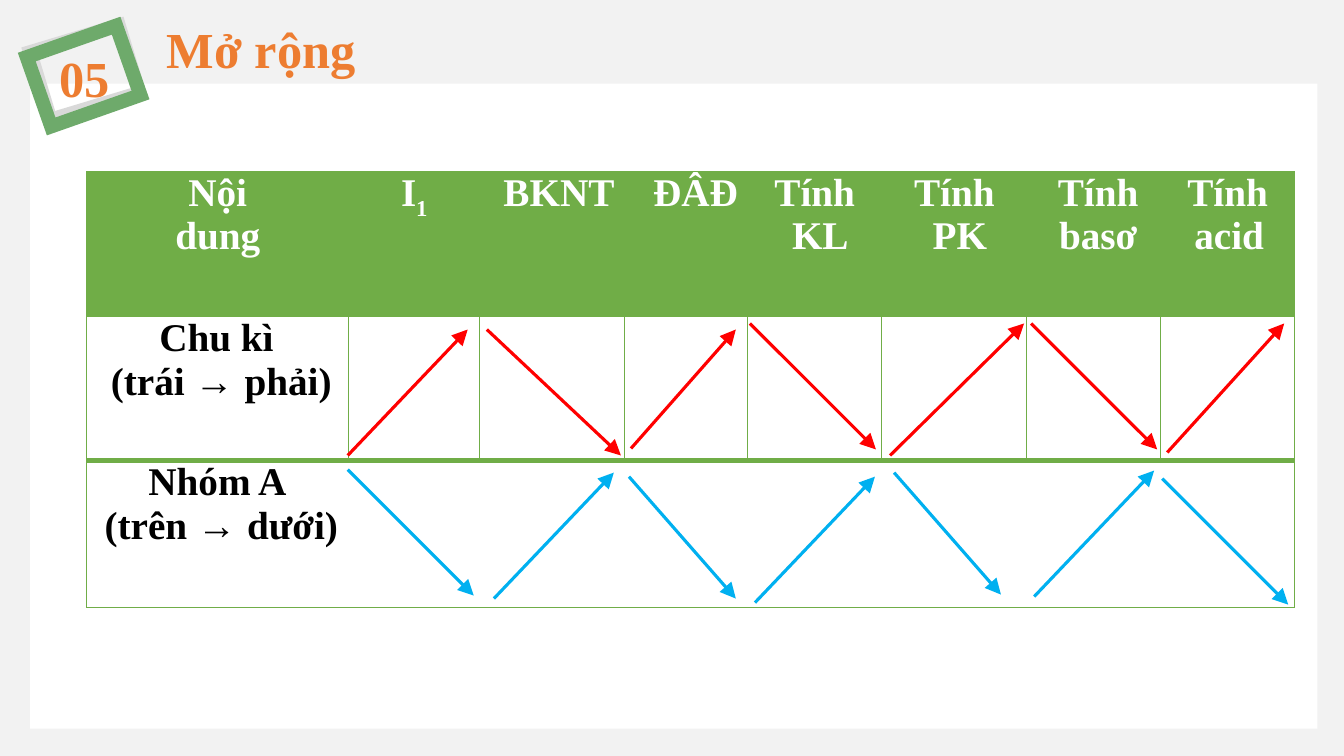
import pptx
import pptx.dml.color
import pptx.enum.shapes
import pptx.enum.text
import pptx.oxml
import pptx.oxml.ns
import pptx.util

# The slide is a grid of 40 columns by 22.5 rows of square units
UNIT = pptx.util.Inches(13.33) / 40
SERIF = "Times New Roman"
GREEN, ORANGE, RED, BLUE = "70AD47", "ED7D31", "FF0000", "00B0F0"
CENTER = pptx.enum.text.PP_ALIGN.CENTER
RIGHT = pptx.enum.text.PP_ALIGN.RIGHT

COLUMNS = [7.8, 3.9, 4.29, 3.66, 3.99, 4.32, 3.99, 3.99]
ROWS = [4.32, 4.29, 4.38]

# Heading pieces, then left margin, right margin and first-line indent
HEADINGS = [
    (["Nội dung"], 1.8, 1.8, 0),
    (["I", "1"], 0.87, 0.87, 0),
    (["BKNT"], 0.42, 0, 0),
    (["ĐÂĐ"], 0.6, 0, 0),
    (["Tính KL"], 0.93, 0.55, -0.33),
    (["Tính PK"], 0.93, 0.55, -0.33),
    (["Tính basơ"], 0.3, 0, 0),
    (["Tính acid"], 0.72, 0.6, -0.09),
]
ROW_LABELS = [
    [["Chu kì "], ["(trái ", "→ ", "phải)"]],
    [["Nhóm A "], ["(trên ", "→ ", "dưới)"]],
]

# Left, top, width and height of each trend arrow
PERIOD_ARROWS = [
    (10.35, 9.81, 3.57, 3.75), (14.49, 9.81, 3.99, 3.75),
    (18.78, 9.81, 3.12, 3.54), (22.32, 9.63, 3.75, 3.75),
    (26.49, 9.63, 3.99, 3.93), (30.69, 9.63, 3.75, 3.75),
    (34.74, 9.63, 3.48, 3.84),
]
GROUP_ARROWS = [
    (10.35, 13.98, 3.75, 3.75), (14.7, 14.07, 3.57, 3.75),
    (18.72, 14.19, 3.18, 3.63), (22.47, 14.19, 3.57, 3.75),
    (26.61, 14.07, 3.18, 3.63), (30.78, 14.01, 3.57, 3.75),
    (34.59, 14.25, 3.75, 3.75),
]


def grid(*units):
    return [round(value * UNIT) for value in units]


def color(hex_text):
    return pptx.dml.color.RGBColor.from_string(hex_text)


def element(tag, body="", **attributes):
    listed = "".join(f' {name}="{value}"' for name, value in attributes.items())
    namespace = pptx.oxml.ns.nsdecls("a")
    return pptx.oxml.parse_xml(f"<a:{tag} {namespace}{listed}>{body}</a:{tag}>")


def style_span(span, size, hex_text, font=SERIF):
    span.font.name = font
    span.font.size = pptx.util.Pt(size)
    span.font.bold = True
    span.font.color.rgb = color(hex_text)


def add_rectangle(page, place, fill=None, line=None, rotation=0):
    kind = pptx.enum.shapes.MSO_SHAPE.RECTANGLE
    box = page.shapes.add_shape(kind, *grid(*place))
    box.shadow.inherit = False
    box.rotation = rotation
    if fill:
        box.fill.solid()
        box.fill.fore_color.rgb = color(fill)
    else:
        box.fill.background()
    if line:
        box.line.color.rgb = color(line)
        box.line.width = pptx.util.Pt(10)
        box.element.spPr.get_or_add_ln().append(element("miter", lim=800000))
    else:
        box.line.fill.background()


def write_heading(box, place, text, wrap, align=None):
    box.left, box.top, box.width, box.height = grid(*place)
    frame = box.text_frame
    frame.text = text
    frame.word_wrap = wrap
    frame.auto_size = pptx.enum.text.MSO_AUTO_SIZE.SHAPE_TO_FIT_TEXT
    frame.vertical_anchor = pptx.enum.text.MSO_ANCHOR.TOP
    para = frame.paragraphs[0]
    para.alignment = align
    style_span(para.runs[0], 36, ORANGE)


def add_trend(page, place, rising, hex_text):
    left, top, width, height = grid(*place)
    start, end = (top + height, top) if rising else (top, top + height)
    arrow = page.shapes.add_connector(
        pptx.enum.shapes.MSO_CONNECTOR.STRAIGHT, left, start, left + width, end)
    arrow.line.color.rgb = color(hex_text)
    arrow.line.width = pptx.util.Pt(2.25)
    properties = arrow.element.spPr
    properties.get_or_add_ln().append(
        element("tailEnd", type="triangle", w="lg", len="lg"))
    properties.append(element("effectLst"))


def write_cell(para, pieces, hex_text, left, right=0, indent=0):
    para.alignment = CENTER
    margins = para._p.get_or_add_pPr()
    for name, value in zip(("marL", "marR", "indent"), grid(left, right, indent)):
        margins.set(name, str(value))
    for piece in pieces:
        span = para.add_run()
        span.text = piece
        style_span(span, 28, hex_text, "Arial" if "→" in piece else SERIF)
        if piece == "1":
            span._r.get_or_add_rPr().set("baseline", "-25000")


def format_cell(cell, row, column):
    cell.margin_left = cell.margin_right = 0
    cell.margin_top = cell.margin_bottom = 0
    # The last row is open between its cells, with a thick line above it
    last_row = row == len(ROWS) - 1
    widths = {
        "lnL": 0 if last_row and column > 0 else 0.5,
        "lnR": 0 if last_row and column < len(COLUMNS) - 1 else 0.5,
        "lnT": 4 if last_row else 0.5,
        "lnB": 4 if row == 1 else 0.5,
    }
    solid = f'<a:solidFill><a:srgbClr val="{GREEN}"/></a:solidFill>'
    for side, width in widths.items():
        cell._tc.get_or_add_tcPr().append(element(
            side, solid if width else "<a:noFill/>", w=pptx.util.Pt(width)))
    if row == 0:
        cell.fill.solid()
        cell.fill.fore_color.rgb = color(GREEN)
    else:
        cell.fill.background()


def add_trend_table(page):
    place = grid(2.58, 5.1, sum(COLUMNS), sum(ROWS))
    table = page.shapes.add_table(len(ROWS), len(COLUMNS), *place).table
    table.first_row = table.horz_banding = False
    for column, width in zip(table.columns, grid(*COLUMNS)):
        column.width = width
    for row, height in zip(table.rows, grid(*ROWS)):
        row.height = height
    for row in range(len(ROWS)):
        for column in range(len(COLUMNS)):
            format_cell(table.cell(row, column), row, column)
    for column, (pieces, *margins) in enumerate(HEADINGS):
        para = table.cell(0, column).text_frame.paragraphs[0]
        write_cell(para, pieces, "FFFFFF", *margins)
    for row, lines in enumerate(ROW_LABELS, start=1):
        frame = table.cell(row, 0).text_frame
        frame.add_paragraph()
        for para, pieces in zip(frame.paragraphs, lines):
            write_cell(para, pieces, "000000", 0.21)


def main():
    deck = pptx.Presentation()
    deck.slide_width = pptx.util.Inches(13.33)
    deck.slide_height = pptx.util.Inches(7.5)
    page = deck.slides.add_slide(deck.slide_layouts[5])
    page.background.fill.solid()
    page.background.fill.fore_color.rgb = color("F2F2F2")

    # Panel and tilted number frame
    add_rectangle(page, (0.9, 2.49, 38.31, 19.2), fill="FFFFFF")
    add_rectangle(page, (1.14, 1.11, 2.76, 2.1), line="D9D9D9", rotation=343.2)
    add_rectangle(page, (1.08, 1.17, 2.82, 2.19), line="6EAA6B", rotation=340.6)

    # Title and section number
    write_heading(page.shapes.title, (4.62, 0.39, 6.27, 2.13), "Mở rộng", False, RIGHT)
    number_place = (1.47, 1.26, 2.22, 2.13)
    number = page.shapes.add_textbox(*grid(*number_place))
    write_heading(number, number_place, "05", True)

    # Table with alternating trends, opposite in the two rows
    add_trend_table(page)
    for index, (period, group) in enumerate(zip(PERIOD_ARROWS, GROUP_ARROWS)):
        add_trend(page, period, index % 2 == 0, RED)
        add_trend(page, group, index % 2 == 1, BLUE)

    deck.save("out.pptx")


if __name__ == "__main__":
    main()
